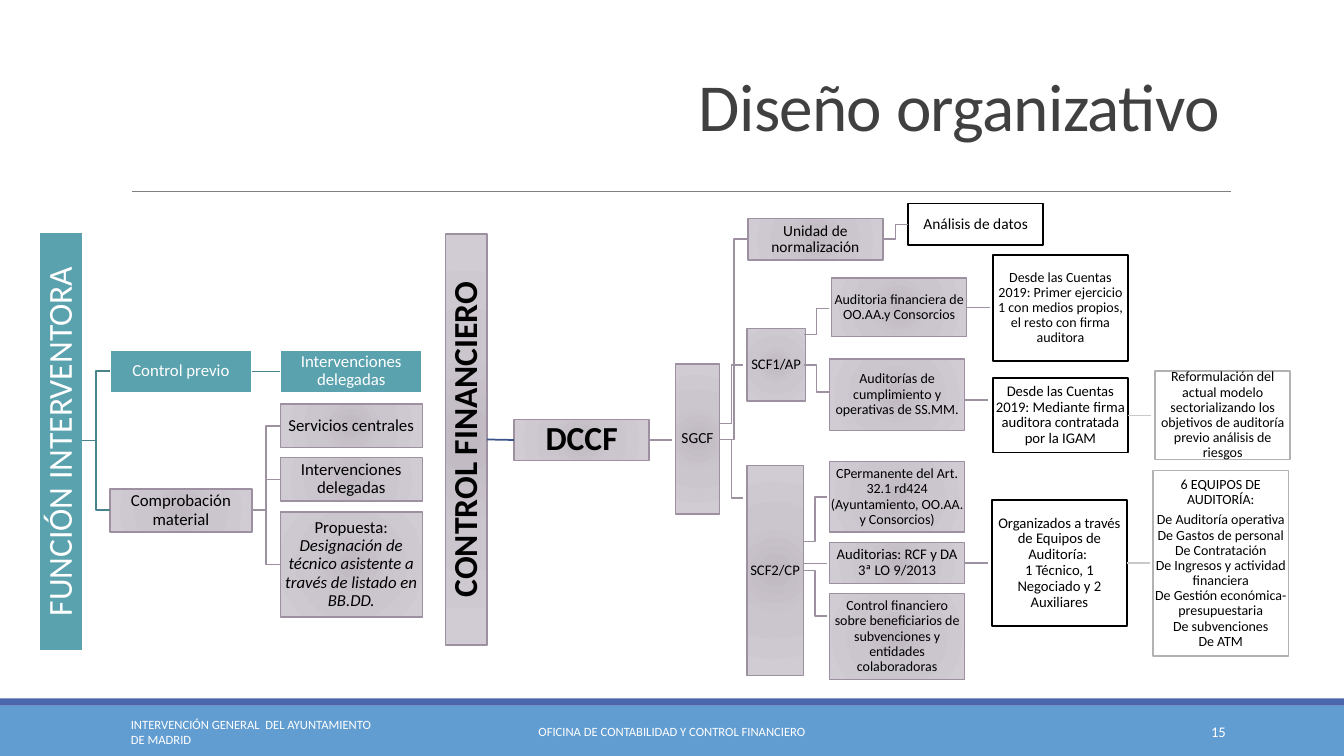
from dataclasses import dataclass

from lxml import etree
from pptx import Presentation
from pptx import util as u
from pptx.dml.color import RGBColor
from pptx.enum import shapes, text
from pptx.oxml import ns, parse_xml

# Grid: one unit is a tenth of an inch, 133.3 columns by 75 rows
UNIT = 91440
COLUMNS, ROWS = 133.33, 75
BOX_WIDTH, BRANCH_WIDTH, LOW = 13.4, 14.1, 4.1
RIGHT, LEFT = 3, 1  # connection sites


@dataclass(frozen=True)
class Theme:
    font: str = "Calibri"
    ink: str = "000000"
    white: str = "FFFFFF"
    title: str = "404040"
    rule: str = "808080"
    footer: str = "629DD1"
    stripe: str = "4A66AC"
    teal: str = "5AA2AE"
    teal_line: str = "48828B"
    mauve_line: str = "9D90A0"
    blue_line: str = "3B528A"
    pale_line: str = "C9C9C9"
    grey: str = "B2B2B2"
    mauve_stops: tuple = ((0, "C0B9C2"), (45, "CBC5CD"), (100, "D1CBD3"))
    title_size: float = 48
    bar_size: float = 24
    branch_size: float = 12
    unit_size: float = 11
    medium_size: float = 10.5
    small_size: float = 10
    footer_size: float = 9


THEME = Theme()
# Box styles: fill (None is the mauve gradient), line, line width, text colour
STYLES = {
    "teal": (THEME.teal, THEME.white, 1.25, THEME.white),
    "mauve": (None, THEME.mauve_line, 1, THEME.ink),
    "black": (THEME.white, THEME.ink, 1.25, THEME.ink),
    "grey": (THEME.white, THEME.grey, 1, THEME.ink),
}


def grid(*values):
    return [u.Emu(round(value * UNIT)) for value in values]


def write(shape, paragraphs, size, color=THEME.ink, bold=False, inset=0.01,
          align=text.PP_ALIGN.CENTER, line_spacing=0.9, tracking=None):
    """Fill a shape with text; *asterisks* mark italics, newlines break lines."""
    frame = shape.text_frame
    frame.word_wrap = True
    frame.auto_size = text.MSO_AUTO_SIZE.NONE
    frame.vertical_anchor = text.MSO_ANCHOR.MIDDLE
    if inset is not None:
        frame.margin_left = frame.margin_right = u.Inches(inset)
        frame.margin_top = frame.margin_bottom = u.Inches(inset)
    paragraphs = [paragraphs] if isinstance(paragraphs, str) else paragraphs
    for index, content in enumerate(paragraphs):
        paragraph = frame.add_paragraph() if index else frame.paragraphs[0]
        paragraph.alignment, paragraph.line_spacing = align, line_spacing
        paragraph.space_before = u.Pt(0)
        last = index == len(paragraphs) - 1
        paragraph.space_after = u.Pt(0 if last else size * 0.35)
        for part, piece in enumerate(content.split("*")):
            for row, line in enumerate(piece.split("\n")):
                if row:
                    paragraph.add_line_break()
                if not line:
                    continue
                run = paragraph.add_run()
                run.text = line
                run.font.name, run.font.size = THEME.font, u.Pt(size)
                run.font.bold, run.font.italic = bold, part % 2 == 1
                run.font.color.rgb = RGBColor.from_string(color)
                if tracking:
                    run.font._element.set("spc", str(tracking))


def fill_radial(shape):
    stops = "".join(f'<a:gs pos="{position * 1000}"><a:srgbClr val="{color}"/></a:gs>'
                    for position, color in THEME.mauve_stops)
    gradient = parse_xml(
        f'<a:gradFill {ns.nsdecls("a")} rotWithShape="1"><a:gsLst>{stops}</a:gsLst>'
        '<a:path path="circle"><a:fillToRect l="100000" t="100000" r="100000" b="100000"/>'
        '</a:path></a:gradFill>')
    shape._element.spPr.find(ns.qn("a:prstGeom")).addnext(gradient)


def add_rectangle(slide, area, fill=None, line=None, width=1):
    shape = slide.shapes.add_shape(shapes.MSO_SHAPE.RECTANGLE, *grid(*area))
    shape.shadow.inherit = False
    if fill:
        shape.fill.solid()
        shape.fill.fore_color.rgb = RGBColor.from_string(fill)
    else:
        fill_radial(shape)
    if line:
        shape.line.color.rgb = RGBColor.from_string(line)
        shape.line.width = u.Pt(width)
    else:
        shape.line.fill.background()
    return shape


def add_box(slide, area, content, size, style="mauve", vertical=False, bold=False):
    fill, line, width, color = STYLES[style]
    shape = add_rectangle(slide, area, fill, line, width)
    write(shape, content, size, color, bold)
    if vertical:
        shape.text_frame._txBody.bodyPr.set("vert", "vert270")
    return shape


def add_line(slide, start, end, color=THEME.mauve_line, width=1, elbow=False,
             source=None, target=None):
    kind = shapes.MSO_CONNECTOR.ELBOW if elbow else shapes.MSO_CONNECTOR.STRAIGHT
    connector = slide.shapes.add_connector(kind, *grid(*start, *end))
    if source is not None:
        connector.begin_connect(source, RIGHT)
    if target is not None:
        connector.end_connect(target, LEFT)
    connector.line.color.rgb = RGBColor.from_string(color)
    connector.line.width = u.Pt(width)
    etree.SubElement(connector._element.spPr, ns.qn("a:effectLst"))


def add_frame(slide):
    """Title, rule and footer."""
    add_rectangle(slide, (0, 70, COLUMNS, 5), THEME.footer)
    add_rectangle(slide, (0, 69.3, COLUMNS, 0.7), THEME.stripe)
    add_line(slide, (13.1, 19), (122.1, 19), THEME.rule, 0.5)
    title = slide.shapes.title
    title.left, title.top, title.width, title.height = grid(46.8, 3.1, 75.2, 15.9)
    write(title, "Diseño organizativo", THEME.title_size, THEME.title, inset=None,
          align=text.PP_ALIGN.RIGHT, line_spacing=0.85, tracking=-50)
    for left, width, content, size, align in (
            (12, 27, "INTERVENCIÓN GENERAL  DEL AYUNTAMIENTO DE MADRID",
             THEME.footer_size, text.PP_ALIGN.LEFT),
            (40.3, 52.7, "OFICINA DE CONTABILIDAD Y CONTROL FINANCIERO",
             THEME.footer_size, text.PP_ALIGN.CENTER),
            (108.3, 14.3, "15", THEME.medium_size, text.PP_ALIGN.RIGHT)):
        label = slide.shapes.add_textbox(*grid(left, 70.6, width, 4))
        write(label, content, size, THEME.white, inset=None, align=align, line_spacing=1)


def add_intervention_tree(slide):
    first, second, size = 10.9, 27.8, THEME.branch_size
    add_box(slide, (3.9, 23, 4.3, 41.6), "FUNCIÓN INTERVENTORA", THEME.bar_size, "teal", True)
    prior = add_box(slide, (first, 34.7, BRANCH_WIDTH, 4.3), "Control previo", size, "teal")
    delegated = add_box(slide, (second, 34.7, BRANCH_WIDTH, 4.3),
                        "Intervenciones delegadas", size, "teal")
    add_box(slide, (first, 48.5, BRANCH_WIDTH, 4.3), "Comprobación material", size)
    for top, height, content in (
            (40.1, 4.3, "Servicios centrales"),
            (45.4, 4.3, "Intervenciones delegadas"),
            (50.8, 10.4, "Propuesta: *Designación de técnico asistente a través "
                         "de listado en BB.DD.*")):
        add_box(slide, (second, top, BRANCH_WIDTH, height), content, size)
        add_line(slide, (25, 50.6), (second, top + height / 2), elbow=True)
    for row in (36.8, 50.6):
        add_line(slide, (8.1, 43.7), (first, row), THEME.teal_line, 1.25, elbow=True)
    add_line(slide, (25, 36.8), (second, 36.8), THEME.teal_line, 1.25,
             source=prior, target=delegated)


def add_control_tree(slide):
    audits, means, outcome = 82.3, 98.5, 114.5
    unit, medium, small = THEME.unit_size, THEME.medium_size, THEME.small_size
    # Boxes
    control = add_box(slide, (44.2, 23.2, LOW, 40.8), "CONTROL FINANCIERO",
                      THEME.bar_size, vertical=True, bold=True)
    department = add_box(slide, (51, 41.6, BOX_WIDTH, LOW), "DCCF", THEME.bar_size, bold=True)
    financial, special, teams = [add_box(slide, (left, top, BOX_WIDTH, height), *rest)
        for left, top, height, *rest in (
            (82.5, 27.6, 5.8, "Auditoria financiera de OO.AA.y Consorcios", small),
            (means, 37.5, 7.4, "Desde las Cuentas 2019: Mediante firma auditora "
             "contratada por la IGAM", medium, "black"),
            (98.4, 49.6, 12.5, "Organizados a través de Equipos de Auditoría: \n"
             "1 Técnico, 1 Negociado y 2 Auxiliares", medium, "black"))]
    reports = add_box(slide, (audits, 53.8, BOX_WIDTH, LOW),
                      "Auditorias: RCF y DA 3ª LO 9/2013", medium)
    for left, top, width, height, *rest in (
            (67, 36.1, 4.4, 14.9, "SGCF", unit),
            (74.2, 21.7, BOX_WIDTH, LOW, "Unidad de normalización", unit),
            (90.1, 20.2, BOX_WIDTH, LOW, "Análisis de datos", unit, "black"),
            (74.1, 32.6, 5.8, 7.2, "SCF1/AP", medium),
            (74.1, 46.2, 5.6, 20.8, "SCF2/CP", medium),
            (means, 25.3, BOX_WIDTH, 10.5, "Desde las Cuentas 2019: Primer ejercicio\n"
             "1 con medios propios, el resto con firma auditora", small, "black"),
            (audits, 35.6, BOX_WIDTH, 7.1,
             "Auditorías de cumplimiento y operativas de SS.MM.", small),
            (114.6, 36.8, BOX_WIDTH, 8.8, "Reformulación del actual modelo sectorializando "
             "los objetivos de auditoría previo análisis de riesgos", small, "grey"),
            (audits, 45.8, BOX_WIDTH, 7, "CPermanente del Art. 32.1 rd424 "
             "(Ayuntamiento, OO.AA. y Consorcios)", small),
            (114.4, 46.7, BOX_WIDTH, 18.4, (
                "6 EQUIPOS DE AUDITORÍA:",
                "De Auditoría operativa\nDe Gastos de personal\nDe Contratación\n"
                "De Ingresos y actividad financiera\nDe Gestión económica-presupuestaria\n"
                "De subvenciones\nDe ATM"), small, "grey"),
            (audits, 58.9, BOX_WIDTH, 8.5, "Control financiero sobre beneficiarios de "
             "subvenciones y entidades colaboradoras", small)):
        add_box(slide, (left, top, width, height), *rest)
    # Branches
    for start, end in (
            ((71.4, 43.6), (74.2, 23.7)), ((71.4, 42), (73.7, 36.2)),
            ((71.4, 43.6), (73.7, 49.4)), ((87.6, 23.7), (90.1, 22.3)),
            ((79.8, 33.2), (82.2, 30.6)), ((79.8, 36.2), (82.2, 38.9)),
            ((79.7, 53.7), (82, 49.3)), ((79.7, 56.6), (82, 61.1))):
        add_line(slide, start, end, elbow=True)
    # Straight links
    add_line(slide, (48.3, 43.6), (51, 43.6), THEME.blue_line, 1.25,
             source=control, target=department)
    for source, start, end, row, color in (
            (department, 64.4, 66.7, 43.65, THEME.mauve_line),
            (financial, 95.9, 98.2, 30.5, THEME.mauve_line),
            (None, 95.7, 98, 39.7, THEME.mauve_line),
            (special, 111.9, 114.2, 41.2, THEME.pale_line),
            (None, 79.7, 82, 55.9, THEME.mauve_line),
            (reports, 95.7, 98, 55.85, THEME.mauve_line),
            (teams, 111.8, 114.1, 55.85, THEME.pale_line)):
        add_line(slide, (start, row), (end, row), color, source=source)


def main():
    presentation = Presentation()
    presentation.slide_width, presentation.slide_height = grid(COLUMNS, ROWS)
    slide = presentation.slides.add_slide(presentation.slide_layouts[5])
    add_frame(slide)
    add_intervention_tree(slide)
    add_control_tree(slide)
    presentation.save("out.pptx")


if __name__ == "__main__":
    main()
